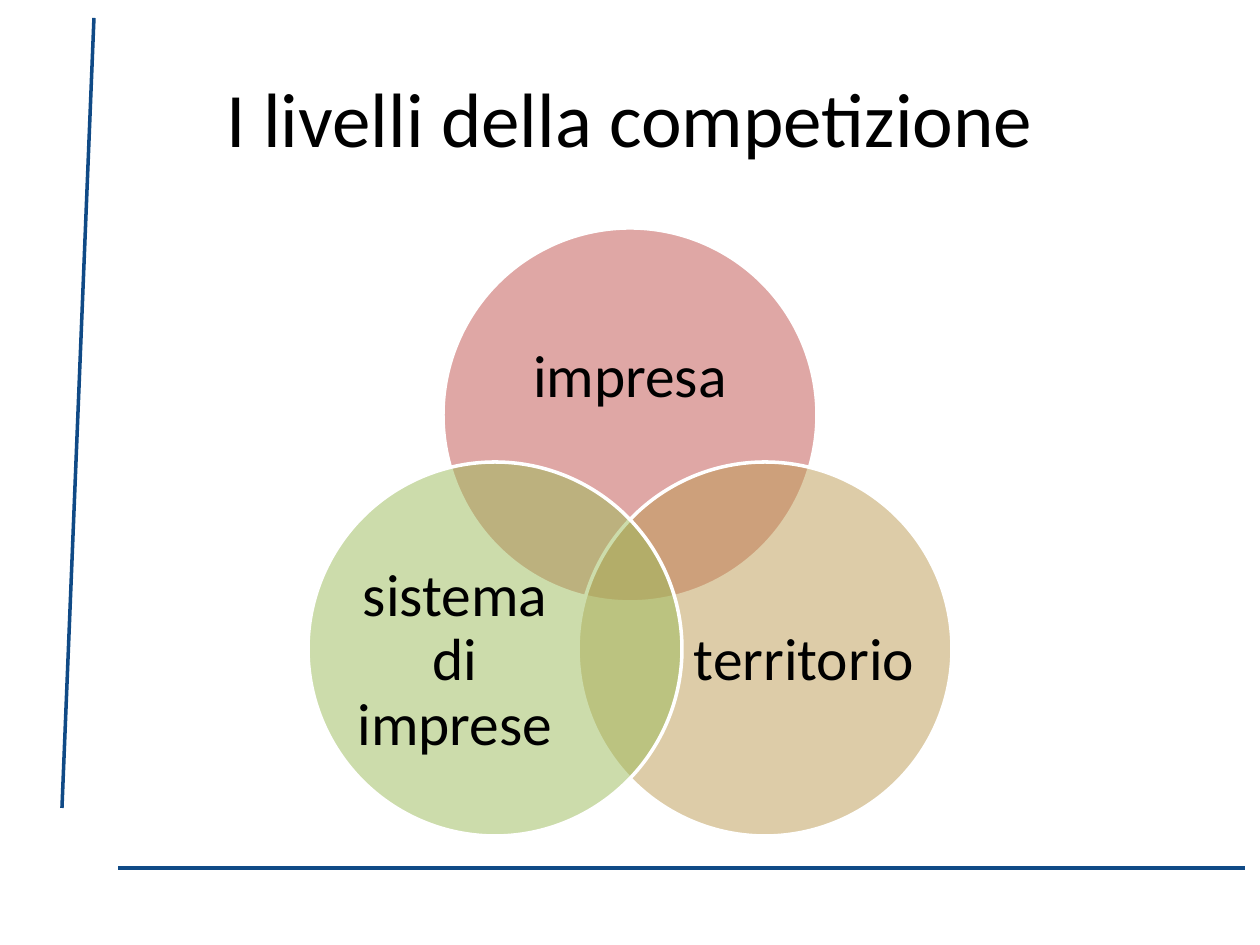
import pptx
import pptx.dml.color
import pptx.enum.shapes
import pptx.enum.text
import pptx.oxml
import pptx.oxml.ns
import pptx.util

RGBColor = pptx.dml.color.RGBColor
BLACK = RGBColor(0x00, 0x00, 0x00)
WHITE = RGBColor(0xFF, 0xFF, 0xFF)
BLUE = RGBColor(0x10, 0x4A, 0x86)
RED = RGBColor(0xC0, 0x50, 0x4D)
SAND = RGBColor(0xBD, 0x9B, 0x53)
GREEN = RGBColor(0x9B, 0xBB, 0x59)

EMU_PER_PX = 914400 / 126
DIAMETER = 374


def px(value):
    return pptx.util.Emu(round(value * EMU_PER_PX))


class SlideBuilder:
    font_name = "Calibri"
    line_width = pptx.util.Pt(2)

    def __init__(self, slide):
        self.slide = slide

    def line(self, x1, y1, x2, y2):
        connector = self.slide.shapes.add_connector(
            pptx.enum.shapes.MSO_CONNECTOR.STRAIGHT, px(x1), px(y1), px(x2), px(y2))
        connector.line.color.rgb = BLUE
        connector.line.width = self.line_width
        properties = connector._element.spPr
        properties.append(pptx.oxml.parse_xml(
            f'<a:effectLst {pptx.oxml.ns.nsdecls("a")}/>'))

    def circle(self, left, top, color):
        shape = self.slide.shapes.add_shape(
            pptx.enum.shapes.MSO_SHAPE.OVAL, px(left), px(top), px(DIAMETER), px(DIAMETER))
        shape.shadow.inherit = False
        shape.fill.solid()
        shape.fill.fore_color.rgb = color
        shape.line.color.rgb = WHITE
        shape.line.width = self.line_width
        # Half transparent, so that the overlaps show
        fill_color = shape._element.spPr.find(
            f'{pptx.oxml.ns.qn("a:solidFill")}/{pptx.oxml.ns.qn("a:srgbClr")}')
        fill_color.append(pptx.oxml.parse_xml(
            f'<a:alpha {pptx.oxml.ns.nsdecls("a")} val="50000"/>'))

    def text(self, content, left, top, width, height, size, spacing=1.0):
        box = self.slide.shapes.add_textbox(px(left), px(top), px(width), px(height))
        frame = box.text_frame
        frame.word_wrap = True
        frame.vertical_anchor = pptx.enum.text.MSO_ANCHOR.MIDDLE
        frame.margin_left = frame.margin_right = 0
        frame.margin_top = frame.margin_bottom = 0
        paragraph = frame.paragraphs[0]
        paragraph.text = content
        paragraph.alignment = pptx.enum.text.PP_ALIGN.CENTER
        paragraph.line_spacing = spacing
        paragraph.font.name = self.font_name
        paragraph.font.size = pptx.util.Pt(size)
        paragraph.font.color.rgb = BLACK


def main():
    presentation = pptx.Presentation()
    presentation.slide_width = px(1260)
    presentation.slide_height = px(945)
    slide = presentation.slides.add_slide(presentation.slide_layouts[6])
    builder = SlideBuilder(slide)

    # Frame lines
    builder.line(94, 18, 62, 808)
    builder.line(1245, 868, 118, 868)

    # Title
    builder.text("I livelli della competizione", 63, 38, 1134, 158, 44)

    # Venn diagram: circle position and colour, then label and its box
    levels = [
        (443, 228, RED, "impresa", (493, 294, 274, 169)),
        (578, 462, SAND, "territorio", (692, 559, 224, 205)),
        (308, 462, GREEN, "sistema di imprese", (343, 559, 224, 205)),
    ]
    for left, top, color, label, label_box in levels:
        builder.circle(left, top, color)
        builder.text(label, *label_box, 34, spacing=0.9)

    presentation.save("out.pptx")


if __name__ == "__main__":
    main()
